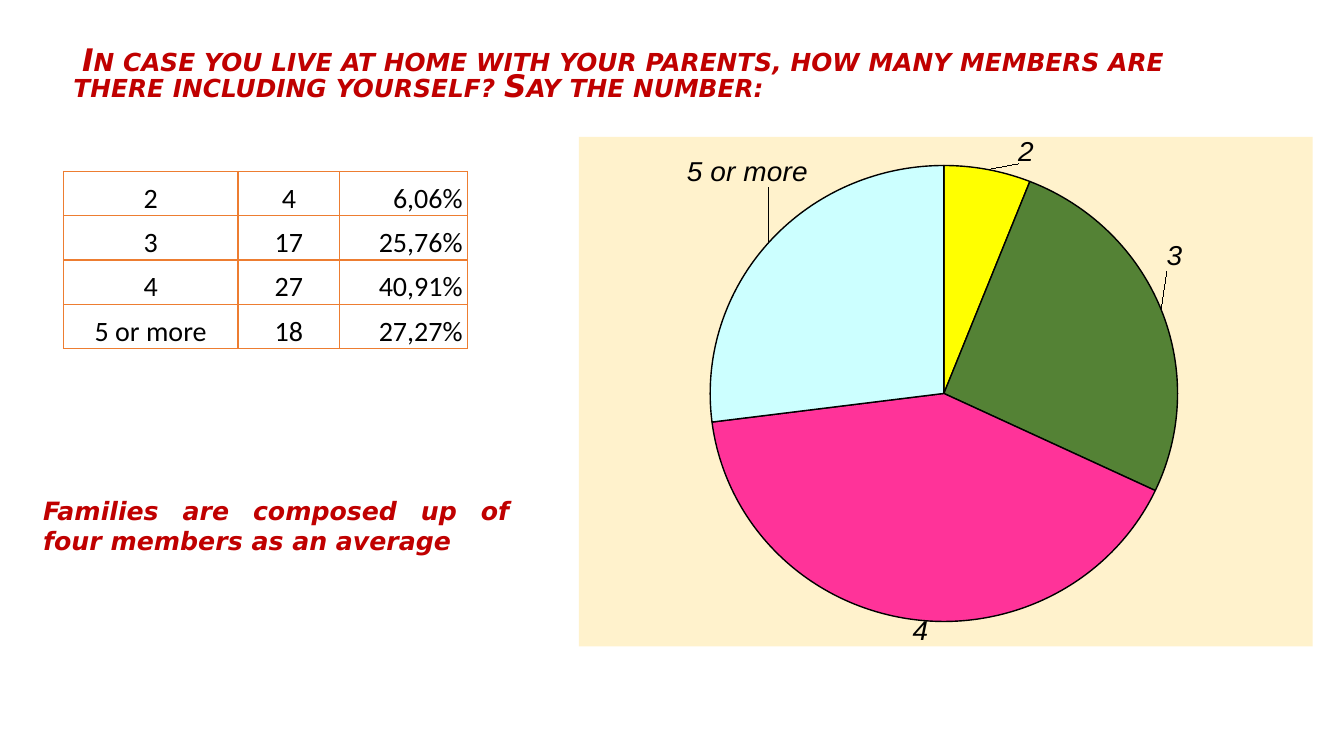
from dataclasses import dataclass

from lxml import etree
from pptx import Presentation
from pptx.chart.data import CategoryChartData
from pptx.dml.color import RGBColor
from pptx.enum.chart import XL_CHART_TYPE, XL_LABEL_POSITION
from pptx.enum.text import MSO_ANCHOR, PP_ALIGN
from pptx.oxml import parse_xml
from pptx.oxml.ns import nsdecls, qn
from pptx.util import Inches, Pt

PIE = XL_CHART_TYPE.PIE
OUTSIDE_END = XL_LABEL_POSITION.OUTSIDE_END
MIDDLE, BOTTOM = MSO_ANCHOR.MIDDLE, MSO_ANCHOR.BOTTOM
CENTER, RIGHT = PP_ALIGN.CENTER, PP_ALIGN.RIGHT
LEFT, JUSTIFY = PP_ALIGN.LEFT, PP_ALIGN.JUSTIFY


@dataclass(frozen=True)
class Theme:
    """Colours, fonts and type sizes of the slide."""
    accent: str = "C00000"
    ink: str = "000000"
    border: str = "ED7D31"
    chart_back: str = "FFF2CC"
    slices: tuple = ("FFFF00", "548235", "FF3399", "CCFFFF")
    heading_font: str = "DejaVu Sans"
    table_font: str = "Calibri"
    chart_font: str = "Arial"
    title_size: float = 22.2
    note_size: float = 18
    data_size: float = 20


THEME = Theme()
QUESTION = (" In case you live at home with your parents, how many members are "
            "there including yourself? Say the number:")
CONCLUSION = "Families are composed up of four members as an average"
ANSWERS = (
    ("2", "4", "6,06%"),
    ("3", "17", "25,76%"),
    ("4", "27", "40,91%"),
    ("5 or more", "18", "27,27%"),
)
SHARES = (6, 26, 41, 27)
LABEL_SHIFTS = ((0.04, 0), (0, -0.07), (0.03, -0.01), (0.06, -0.1))


def apply_format(target, values):
    """Set every named attribute on the target."""
    for name, value in values.items():
        setattr(target, name, value)


def style_font(font, name, size, color, **flags):
    """Give a font its face, size, colour and flags."""
    apply_format(font, {"name": name, "size": Pt(size), **flags})
    font.color.rgb = RGBColor.from_string(color)


def add_heading(slide, text, box, size, paragraph_format, anchor=None):
    """Add a bold italic text box and return its run."""
    frame = slide.shapes.add_textbox(*map(Inches, box)).text_frame
    apply_format(frame, {"word_wrap": True, "vertical_anchor": anchor})
    paragraph = frame.paragraphs[0]
    apply_format(paragraph, paragraph_format)
    run = paragraph.add_run()
    run.text = text
    style_font(run.font, THEME.heading_font, size, THEME.accent, bold=True, italic=True)
    return run


def border_cell(cell):
    """Draw a thin line on all four sides of a cell."""
    properties = cell._tc.get_or_add_tcPr()
    for index, side in enumerate(("lnL", "lnR", "lnT", "lnB")):
        properties.insert(index, parse_xml(
            f'<a:{side} {nsdecls("a")} w="{Pt(1)}"><a:solidFill>'
            f'<a:srgbClr val="{THEME.border}"/></a:solidFill></a:{side}>'))


def add_answer_table(slide, rows, left, top, widths, row_height):
    """Add the table of answers, counts and percentages."""
    shape = slide.shapes.add_table(
        len(rows), len(widths), Inches(left), Inches(top),
        Inches(sum(widths)), Inches(row_height * len(rows)))
    table = shape.table
    apply_format(table, {"first_row": False, "horz_banding": False})
    for column, width in zip(table.columns, widths):
        column.width = Inches(width)
    cell_format = {
        "margin_left": Inches(0.05), "margin_right": Inches(0.05),
        "margin_top": 0, "margin_bottom": 0, "vertical_anchor": BOTTOM,
    }
    for row_index, row in enumerate(rows):
        for column_index, text in enumerate(row):
            cell = table.cell(row_index, column_index)
            cell.text = text
            apply_format(cell, cell_format)
            cell.fill.background()
            border_cell(cell)
            paragraph = cell.text_frame.paragraphs[0]
            paragraph.alignment = (CENTER, CENTER, RIGHT)[column_index]
            style_font(paragraph.runs[0].font, THEME.table_font, THEME.data_size, THEME.ink)


def manual_layout(**values):
    """Build a chart layout element from its values."""
    layout = parse_xml(f'<c:layout {nsdecls("c")}><c:manualLayout/></c:layout>')
    for name, value in values.items():
        etree.SubElement(layout[0], qn(f"c:{name}")).set("val", str(value))
    return layout


def style_slice(series, index, color, shift):
    """Colour one slice and place its category label."""
    point = series.points[index]
    point.format.fill.solid()
    point.format.fill.fore_color.rgb = RGBColor.from_string(color)
    point.format.line.color.rgb = RGBColor.from_string(THEME.ink)
    point.format.line.width = Pt(1)
    label = point.data_label
    style_font(label.font, THEME.chart_font, THEME.data_size, THEME.ink, italic=True)
    label.position = OUTSIDE_END
    element = series._element.find(qn("c:dLbls")).findall(qn("c:dLbl"))[index]
    element.find(qn("c:showCatName")).set("val", "1")
    element.find(qn("c:showVal")).set("val", "0")
    element.insert(1, manual_layout(x=shift[0], y=shift[1]))


def add_members_pie(slide, box):
    """Add the pie of household sizes."""
    data = CategoryChartData()
    data.categories = [row[0] for row in ANSWERS]
    data.add_series("Series 1", SHARES)
    chart = slide.shapes.add_chart(PIE, *map(Inches, box), data).chart
    apply_format(chart, {"has_legend": False, "has_title": False})
    style_font(chart.font, THEME.chart_font, 10, THEME.ink)
    series = chart.plots[0].series[0]
    labels = series.data_labels
    apply_format(labels, {"show_category_name": True, "show_value": False,
                          "position": OUTSIDE_END})
    style_font(labels.font, THEME.chart_font, THEME.data_size, THEME.ink, italic=True)
    for index, (color, shift) in enumerate(zip(THEME.slices, LABEL_SHIFTS)):
        style_slice(series, index, color, shift)
    plot_area = chart._chartSpace.find(qn("c:chart")).find(qn("c:plotArea"))
    for layout in plot_area.findall(qn("c:layout")):
        plot_area.remove(layout)
    plot_area.insert(0, manual_layout(
        layoutTarget="inner", xMode="edge", yMode="edge",
        x=0.014, y=0.056, w=0.967, h=0.895))
    chart._chartSpace.find(qn("c:txPr")).addprevious(parse_xml(
        f'<c:spPr {nsdecls("c", "a")}><a:solidFill><a:srgbClr val="{THEME.chart_back}"/>'
        '</a:solidFill><a:ln><a:noFill/></a:ln></c:spPr>'))


def main():
    """Build the slide and save it."""
    presentation = Presentation()
    apply_format(presentation, {"slide_width": Inches(13.33), "slide_height": Inches(7.5)})
    slide = presentation.slides.add_slide(presentation.slide_layouts[6])
    title = add_heading(slide, QUESTION, (0.63, 0.42, 11.88, 0.68), THEME.title_size,
                        {"alignment": LEFT, "line_spacing": 0.7}, MIDDLE)
    title.font._element.set("cap", "small")
    add_heading(slide, CONCLUSION, (0.33, 4.86, 4.82, 0.71), THEME.note_size,
                {"alignment": JUSTIFY})
    add_answer_table(slide, ANSWERS, 0.63, 1.7, (1.73, 1.01, 1.27), 0.44)
    add_members_pie(slide, (5.74, 1.32, 7.28, 5.18))
    presentation.save("out.pptx")


if __name__ == "__main__":
    main()
